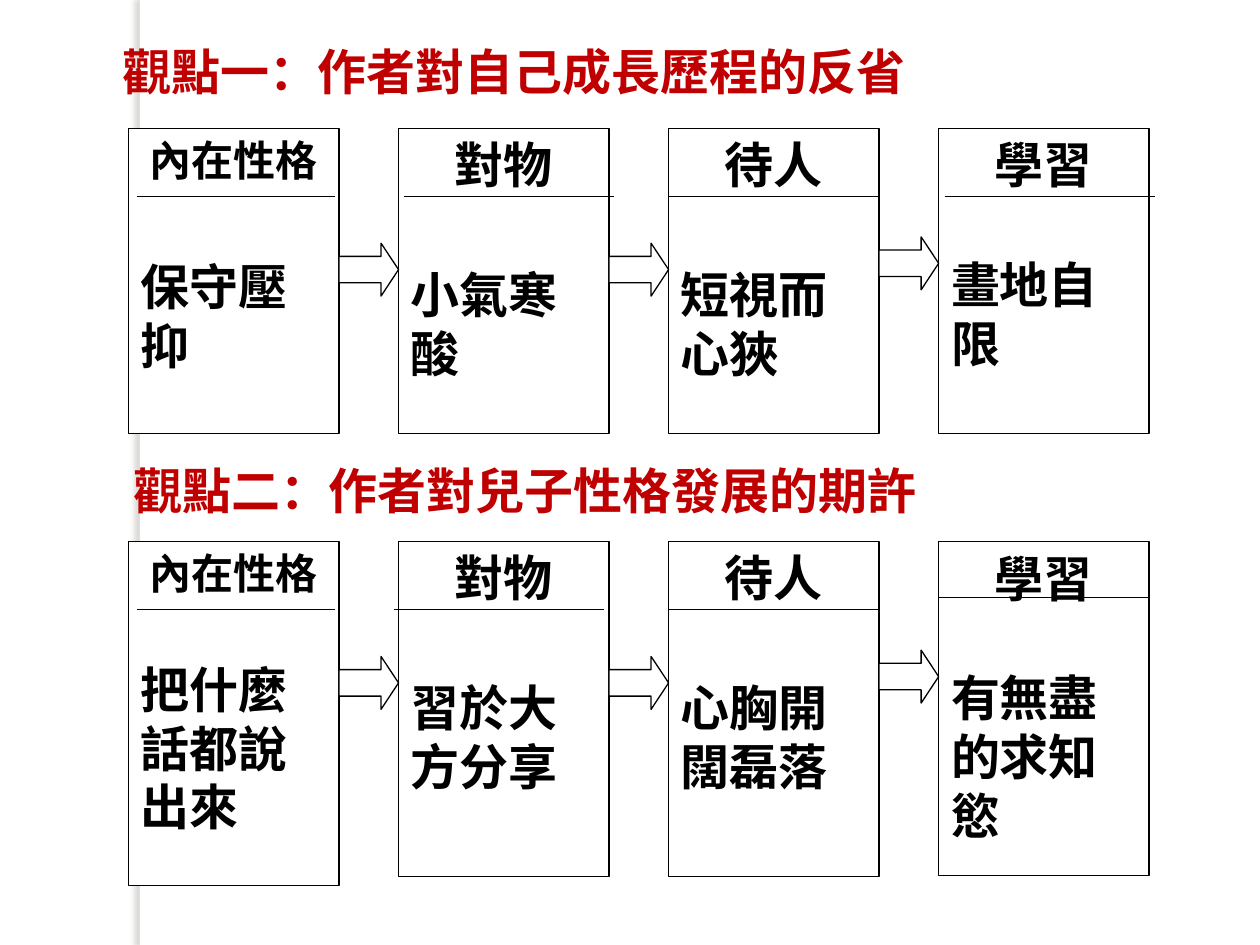
from lxml.etree import SubElement
from pptx import Presentation
from pptx.dml.color import RGBColor
from pptx.enum.shapes import MSO_CONNECTOR, MSO_SHAPE
from pptx.enum.text import MSO_ANCHOR, PP_ALIGN
from pptx.oxml.ns import qn
from pptx.util import Inches, Pt

COLORS = {"paper": "FFFFFF", "ink": "000000", "heading": "C00000", "shade": "736F63"}
FONT = "Noto Sans CJK SC"

# Card grid, in inches
LEFT, CARD_W = 1.02, 1.67
PITCH = (7.45 - LEFT) / 3
GAP = PITCH - CARD_W
LINE_HEIGHT = 1.45  # of the font size

# Card: label, label size, gap line size, text, height, rule (start offset, width, drop)
ROWS = [
    (1.02, [
        ("內在性格", 24, 28, "保守壓抑", 2.42, (0.07, 1.57, 0.54)),
        ("對物", 28, 28, "小氣寒酸", 2.42, (0.04, CARD_W, 0.54)),
        ("待人", 28, 28, "短視而心狹", 2.42, (0, CARD_W, 0.54)),
        ("學習", 28, 24, "畫地自限", 2.42, (0.05, CARD_W, 0.54)),
    ]),
    (4.3, [
        ("內在性格", 24, 24, "把什麼話都說出來", 2.73, (0.07, 1.57, 0.54)),
        ("對物", 28, 28, "習於大方分享", 2.66, (-0.04, CARD_W, 0.54)),
        ("待人", 28, 28, "心胸開闊磊落", 2.66, (0, CARD_W, 0.54)),
        ("學習", 28, 24, "有無盡的求知慾", 2.65, (0, CARD_W, 0.44)),
    ]),
]


class Deck:
    def __init__(self, prs):
        self.prs = prs
        self.s = prs.slides.add_slide(prs.slide_layouts[5])

    def color(self, name):
        return RGBColor.from_string(COLORS[name])

    def text(self, p, text, size, color="ink", **formats):
        for key, value in formats.items():
            setattr(p, key, value)
        r = p.add_run()
        r.text = text
        r.font.color.rgb = self.color(color)
        for key, value in {"name": FONT, "size": Pt(size), "bold": True}.items():
            setattr(r.font, key, value)
        SubElement(r.font._element, qn("a:ea"), typeface=FONT)

    def frame(self, sp, anchor):
        tf = sp.text_frame
        for key, value in {"word_wrap": True, "vertical_anchor": anchor}.items():
            setattr(tf, key, value)
        return tf

    def heading(self, sp, x, y, text):
        box = {"left": x, "top": y, "width": 8, "height": 0.6}
        for key, value in box.items():
            setattr(sp, key, Inches(value))
        tf = self.frame(sp, MSO_ANCHOR.MIDDLE)
        self.text(tf.paragraphs[0], text, 28, "heading", alignment=PP_ALIGN.LEFT)

    def shape(self, kind, x, y, w, h, line="ink"):
        sp = self.s.shapes.add_shape(kind, *map(Inches, (x, y, w, h)))
        sp.shadow.inherit = False
        sp.fill.solid()
        sp.fill.fore_color.rgb = self.color("paper")
        if line:
            sp.line.color.rgb = self.color(line)
            sp.line.width = Pt(0.75)
        else:
            sp.line.fill.background()
        return sp

    def strip(self):
        sp = self.shape(MSO_SHAPE.RECTANGLE, 1.11, 0, 0.08, 7.5, line=None)
        effects = sp._element.spPr.find(qn("a:effectLst"))
        shadow = SubElement(effects, qn("a:outerShdw"), blurRad=str(Pt(3)),
                            dist=str(Pt(3)), dir="10800000", rotWithShape="0")
        shade = SubElement(shadow, qn("a:srgbClr"), val=COLORS["shade"])
        SubElement(shade, qn("a:alpha"), val="25000")

    def card(self, x, y, label, label_size, gap_size, text, height):
        sp = self.shape(MSO_SHAPE.RECTANGLE, x, y, CARD_W, height)
        tf = self.frame(sp, MSO_ANCHOR.TOP)
        self.text(tf.paragraphs[0], label, label_size, alignment=PP_ALIGN.CENTER)
        self.text(tf.add_paragraph(), text, 28, alignment=PP_ALIGN.LEFT,
                  space_before=Pt(gap_size * LINE_HEIGHT))

    def arrow(self, x, y):
        sp = self.shape(MSO_SHAPE.RIGHT_ARROW, x, y, GAP, 0.42)
        sp.adjustments[0], sp.adjustments[1] = 0.5, 0.33

    def rule(self, x, y, w):
        ln = self.s.shapes.add_connector(
            MSO_CONNECTOR.STRAIGHT, *map(Inches, (x, y, x + w, y)))
        ln.line.color.rgb = self.color("ink")
        ln.line.width = Pt(0.75)
        SubElement(ln._element.spPr, qn("a:effectLst"))


def main():
    prs = Presentation()
    prs.slide_width, prs.slide_height = Inches(10), Inches(7.5)
    deck = Deck(prs)

    # Side strip and the two headings
    deck.strip()
    deck.heading(deck.s.shapes.title, 0.87, 0.26, "觀點一：作者對自己成長歷程的反省")
    second = deck.s.shapes.add_textbox(0, 0, 0, 0)
    deck.heading(second, 0.96, 3.59, "觀點二：作者對兒子性格發展的期許")
    # The title stands in front of the strip
    deck.s.shapes.title._element.getparent().append(deck.s.shapes.title._element)

    # Two rows of cards, joined by arrows
    for top, cards in ROWS:
        for i, (*content, (offset, width, drop)) in enumerate(cards):
            x = LEFT + i * PITCH
            deck.card(x, top, *content)
            deck.rule(x + offset, top + drop, width)
            if i:
                rise = 0.05 if i == 3 else 0
                deck.arrow(x - GAP, top + 0.91 - rise)

    prs.save("out.pptx")


if __name__ == "__main__":
    main()
